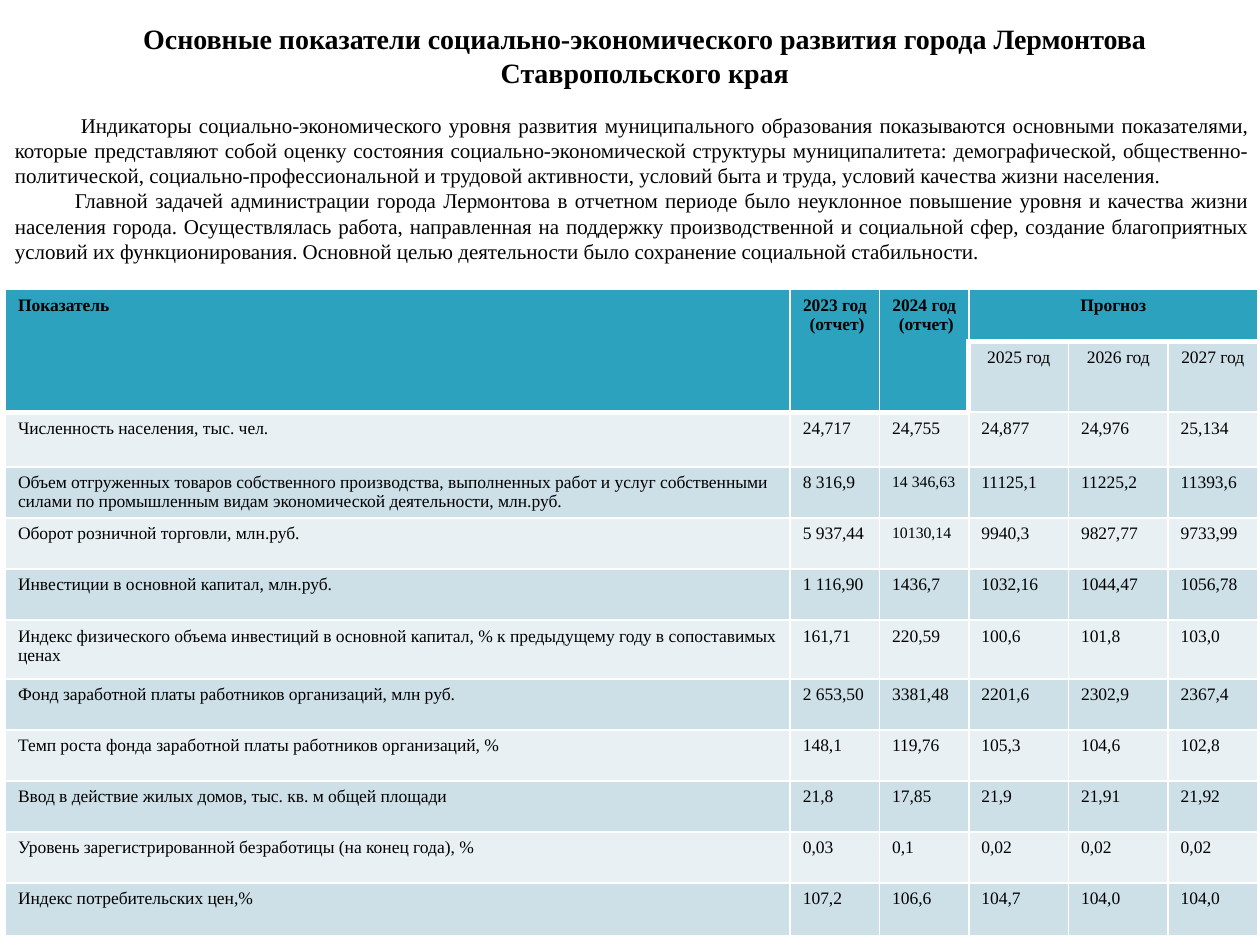
from dataclasses import dataclass

from lxml.etree import SubElement as Sub
from pptx import Presentation as Deck
from pptx.dml.color import RGBColor as RGB
from pptx.enum.text import MSO_ANCHOR as Anchor, MSO_AUTO_SIZE as Auto, PP_ALIGN as Align
from pptx.oxml.ns import qn
from pptx.util import Cm, Pt


@dataclass(frozen=True)
class Theme:
    font: str = "Times New Roman"
    ink: str = "000000"
    line: str = "FFFFFF"
    head: str = "2DA2BF"
    dark: str = "CDE0E8"
    pale: str = "E8F0F4"
    title: int = 16
    body: int = 12
    cell: int = 10
    small: int = 9
    thin: int = 1
    thick: int = 3


TITLE = "Основные показатели социально-экономического развития города Лермонтова Ставропольского края"
BODY = [
    (1.33, "Индикаторы социально-экономического уровня развития муниципального образования показываются "
           "основными показателями, которые представляют собой оценку состояния социально-экономической "
           "структуры муниципалитета: демографической, общественно-политической, социально-профессиональной "
           "и трудовой активности, условий быта и труда, условий качества жизни населения."),
    (1.21, "Главной задачей администрации города Лермонтова в отчетном периоде было неуклонное повышение "
           "уровня и качества жизни населения города. Осуществлялась работа, направленная на поддержку "
           "производственной и социальной сфер, создание благоприятных условий их функционирования. "
           "Основной целью деятельности было сохранение социальной стабильности."),
]
HEADS = [
    ["Показатель", "2023 год\n (отчет)", "2024 год\n (отчет)", "Прогноз", "", ""],
    ["", "", "", "2025 год", "2026 год", "2027 год"],
]
DATA = [
    ["Численность населения, тыс. чел.", "24,717", "24,755", "24,877", "24,976", "25,134"],
    ["Объем отгруженных товаров собственного производства, выполненных работ и услуг собственными силами "
     "по промышленным видам экономической деятельности, млн.руб.",
     "8 316,9", "14 346,63", "11125,1", "11225,2", "11393,6"],
    ["Оборот розничной торговли, млн.руб.", "5 937,44", "10130,14", "9940,3", "9827,77", "9733,99"],
    ["Инвестиции в основной капитал, млн.руб.", "1 116,90", "1436,7", "1032,16", "1044,47", "1056,78"],
    ["Индекс физического объема инвестиций в основной капитал, % к предыдущему году в сопоставимых ценах",
     "161,71", "220,59", "100,6", "101,8", "103,0"],
    ["Фонд заработной платы работников организаций, млн руб.",
     "2 653,50", "3381,48", "2201,6", "2302,9", "2367,4"],
    ["Темп роста фонда заработной платы работников организаций, %",
     "148,1", "119,76", "105,3", "104,6", "102,8"],
    ["Ввод в действие жилых домов, тыс. кв. м общей площади", "21,8", "17,85", "21,9", "21,91", "21,92"],
    ["Уровень зарегистрированной безработицы (на конец года), %", "0,03", "0,1", "0,02", "0,02", "0,02"],
    ["Индекс потребительских цен,%", "107,2", "106,6", "104,7", "104,0", "104,0"],
]
COLS = [15.82, 1.8, 1.8, 2.01, 2.01, 1.8]
ROWS = [1.05, 1.42, 1.1, 1.03, 1.03, 1.03, 1.18, 1.03, 1.03, 1.03, 1.03, 1.07]
SPANS = [(0, 0, 1, 0), (0, 1, 1, 1), (0, 2, 1, 2), (0, 3, 0, 5)]
SMALL = {"14 346,63", "10130,14"}


def apply(item, form):
    for key, val in form.items():
        setattr(item, key, val)


class Page:
    def __init__(self, deck, theme):
        self.theme = theme
        self.slide = deck.slides.add_slide(deck.slide_layouts[5])

    def text(self, frame, lines, size, align, bold=False):
        frame.text = "\n".join(lines)
        for para in frame.paragraphs:
            para.alignment = align
            for run in para.runs:
                apply(run.font, {"name": self.theme.font, "size": Pt(size), "bold": bold})
                run.font.color.rgb = RGB.from_string(self.theme.ink)

    def title(self, text, box):
        shape = self.slide.shapes.title
        apply(shape, dict(zip(("left", "top", "width", "height"), map(Cm, box))))
        frame = shape.text_frame
        apply(frame, {"word_wrap": True, "auto_size": Auto.NONE, "vertical_anchor": Anchor.MIDDLE,
                      "margin_top": 0, "margin_bottom": 0})
        self.text(frame, [text], self.theme.title, Align.CENTER, True)

    def prose(self, parts, box):
        frame = self.slide.shapes.add_textbox(*map(Cm, box)).text_frame
        apply(frame, {"word_wrap": True, "auto_size": Auto.SHAPE_TO_FIT_TEXT})
        self.text(frame, [text for _, text in parts], self.theme.body, Align.JUSTIFY)
        for para, (dent, _) in zip(frame.paragraphs, parts):
            para._p.get_or_add_pPr().set("indent", str(Cm(dent)))

    def edge(self, cell, thick):
        props = cell._tc.get_or_add_tcPr()
        for side in "LRTB":
            width = self.theme.thick if side in thick else self.theme.thin
            line = Sub(props, qn(f"a:ln{side}"), w=str(Pt(width)))
            Sub(Sub(line, qn("a:solidFill")), qn("a:srgbClr"), val=self.theme.line)

    def cell(self, grid, row, col, text):
        cell = grid.cell(row, col)
        top = row == 0 or (row == 1 and col < 3)
        thick = ""
        if top:
            thick = "B"
        elif row == 1:
            thick = "LT" if col == 3 else "T"
        elif row == 2 and col < 3:
            thick = "T"
        self.edge(cell, thick)
        fill = self.theme.head if top else self.theme.dark if row % 2 else self.theme.pale
        cell.fill.solid()
        cell.fill.fore_color.rgb = RGB.from_string(fill)
        if text:
            size = self.theme.small if text in SMALL else self.theme.cell
            align = Align.CENTER if row < 2 and col else Align.LEFT
            self.text(cell.text_frame, [text], size, align, top)

    def table(self, rows, spot):
        size = sum(COLS), sum(ROWS)
        grid = self.slide.shapes.add_table(len(rows), len(COLS), *map(Cm, spot + size)).table
        apply(grid, {"first_row": False, "horz_banding": False})
        for col, width in zip(grid.columns, COLS):
            col.width = Cm(width)
        for row, height in zip(grid.rows, ROWS):
            row.height = Cm(height)
        for r, row in enumerate(rows):
            for c, text in enumerate(row):
                self.cell(grid, r, c, text)
        for r, c, down, right in SPANS:
            grid.cell(r, c).merge(grid.cell(down, right))


def main():
    deck = Deck()
    apply(deck, {"slide_width": Cm(25.4), "slide_height": Cm(19.05)})
    page = Page(deck, Theme())
    page.title(TITLE, (0.9, 0.5, 24.2, 1.23))
    page.table(HEADS + DATA, (0.11, 5.84))
    page.prose(BODY, (0.05, 2.14, 25.4, 3.32))
    deck.save("out.pptx")


if __name__ == "__main__":
    main()
